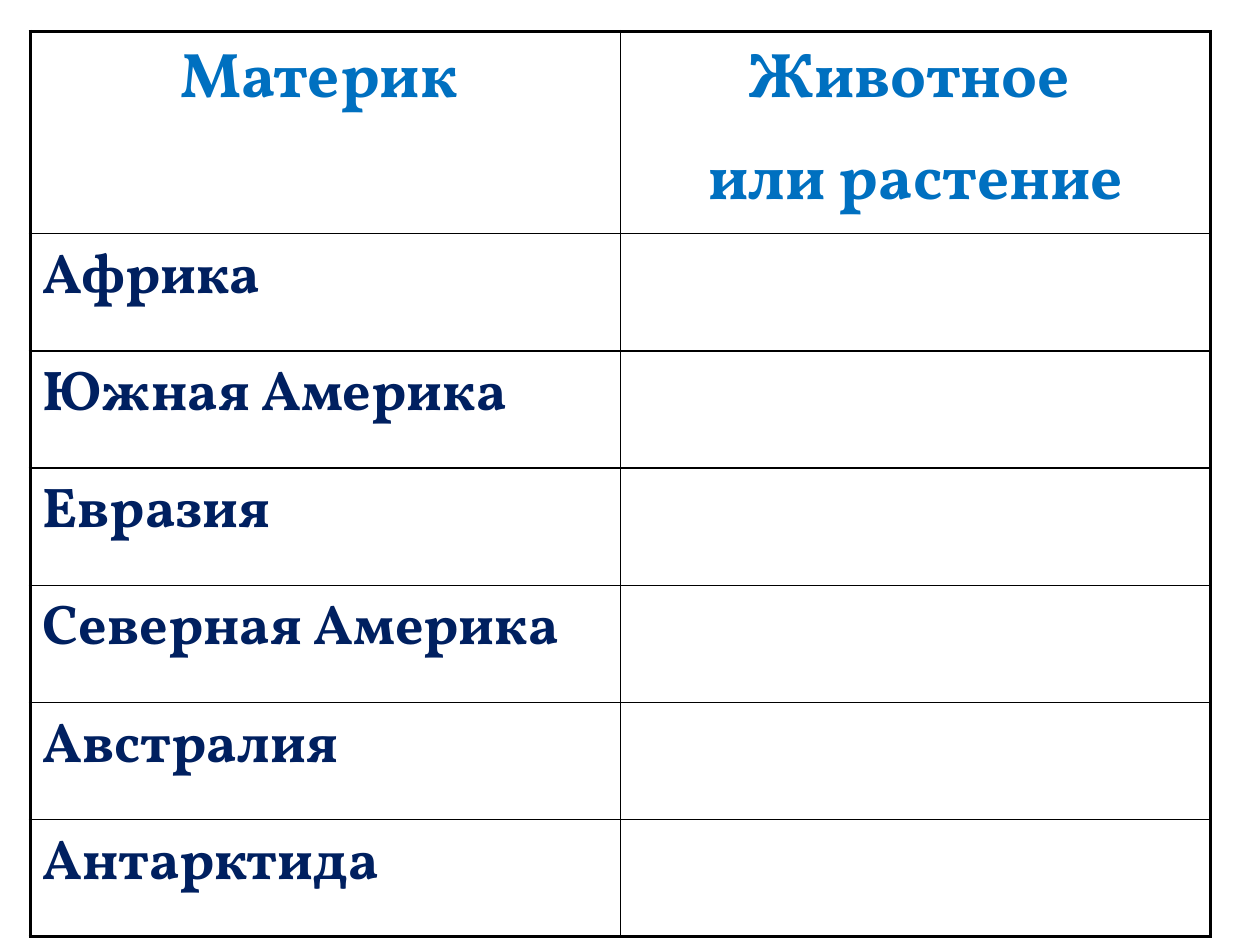
from lxml import etree
from pptx import Presentation
from pptx import util as u
from pptx.dml.color import RGBColor
from pptx.enum import text
from pptx.oxml.ns import qn

HUES = {"head": "0070C0", "name": "002060", "line": "000000"}
FONT = "Vollkorn"
HEADS = [["Материк "], ["Животное ", "или растение"]]
LANDS = ["Африка", "Южная Америка", "Евразия",
         "Северная Америка", "Австралия", "Антарктида"]


def edge(cell, side, width):
    """Draw one border of a cell."""
    props = cell._tc.get_or_add_tcPr()
    line = etree.SubElement(props, qn("a:ln" + side), w=str(u.Pt(width)))
    fill = etree.SubElement(line, qn("a:solidFill"))
    etree.SubElement(fill, qn("a:srgbClr"), val=HUES["line"])


def write(cell, lines, size, hue, align):
    """Fill a cell with bold paragraphs."""
    frame = cell.text_frame
    for i, line in enumerate(lines):
        para = frame.add_paragraph() if i else frame.paragraphs[0]
        para.alignment = align
        if i:
            para.space_before = u.Pt(8)
        run = para.add_run()
        run.text = line
        font = run.font
        font.name, font.size, font.bold = FONT, u.Pt(size), True
        font.color.rgb = RGBColor.from_string(HUES[hue])


def frame_cells(table):
    """Give the table a thick outline and thin inner lines."""
    last_row, last_col = len(table.rows) - 1, len(table.columns) - 1
    for r in range(last_row + 1):
        for c in range(last_col + 1):
            cell = table.cell(r, c)
            outer = {"L": c == 0, "R": c == last_col,
                     "T": r == 0, "B": r == last_row}
            for side, thick in outer.items():
                edge(cell, side, 2.25 if thick else 1)
            cell.fill.background()


def add_grid(slide, left, top, width, height):
    """Place the table of continents in the given box."""
    shape = slide.shapes.add_table(len(LANDS) + 1, len(HEADS),
                                   left, top, width, height)
    table = shape.table
    table.first_row = table.horz_banding = False
    for i, row in enumerate(table.rows):
        row.height = u.Inches(0.93 if i else 1.05)
    shape.height = height
    for c, lines in enumerate(HEADS):
        write(table.cell(0, c), lines, 36, "head", text.PP_ALIGN.CENTER)
    for r, land in enumerate(LANDS, 1):
        write(table.cell(r, 0), [land], 32, "name", text.PP_ALIGN.LEFT)
    frame_cells(table)


def main():
    """Build and save the slide."""
    deck = Presentation()
    deck.slide_width, deck.slide_height = u.Inches(10), u.Inches(7.5)
    slide = deck.slides.add_slide(deck.slide_layouts[6])
    add_grid(slide, u.Inches(0.24), u.Inches(0.25),
             u.Inches(9.37), u.Inches(7))
    deck.save("out.pptx")


if __name__ == "__main__":
    main()
